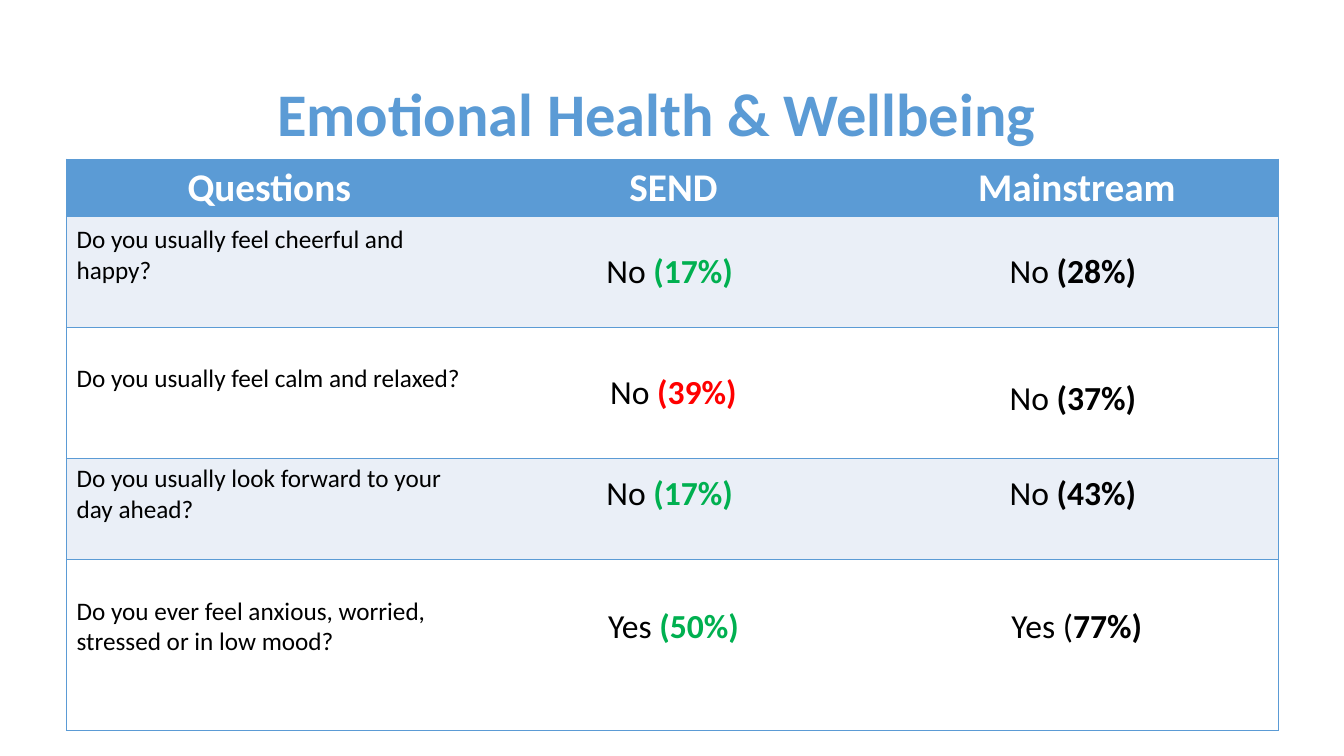
from lxml import etree
from pptx import Presentation
from pptx.dml import color
from pptx.enum import text
from pptx.oxml import ns
from pptx.util import Inches, Pt

BLUE, BAND, WHITE, BLACK = "5B9BD5", "EAEFF7", "FFFFFF", "000000"
GREEN, RED = "00B050", "FF0000"
HEADERS = ["Questions", "SEND", "Mainstream"]
COLS = [4.02, 4, 4]
ROWS = [0.57, 1.1, 1.3, 1, 1.7]
ANSWERS = [
    ("Do you usually feel cheerful and happy?",
     ("No ", "(17%) ", GREEN), ("No ", "(28%) ", BLACK), (0.34, 0, 0)),
    ("Do you usually feel calm and relaxed?",
     ("No ", "(39%)", RED), ("No ", "(37%) ", BLACK), (0.29, 0, -0.11)),
    ("Do you usually look forward to your day ahead?",
     ("No ", "(17%) ", GREEN), ("No", " (43%) ", BLACK), (0.3, 0.3, 0.3)),
    ("Do you ever feel anxious, worried, stressed or in low mood?",
     ("Yes ", "(50%)", GREEN), ("Yes (", "77%)", BLACK), (0.36, 0.36, 0.36)),
]


def rgb(value):
    """Return a colour from its hex string."""
    return color.RGBColor.from_string(value)


def add_run(p, words, hue, **fmt):
    """Add a formatted run to a paragraph."""
    r = p.add_run()
    r.text = words
    for name, value in {"name": "Calibri", **fmt}.items():
        setattr(r.font, name, value)
    r.font.color.rgb = rgb(hue)


def add_title(s, words):
    """Add the centred slide title."""
    sp = s.shapes.add_textbox(Inches(0.17), Inches(0.75), Inches(12.82), Inches(0.83))
    tf = sp.text_frame
    tf.word_wrap = True
    tf.vertical_anchor = text.MSO_ANCHOR.MIDDLE
    p = tf.paragraphs[0]
    p.alignment = text.PP_ALIGN.CENTER
    p.line_spacing = 0.9
    add_run(p, words, BLUE, size=Pt(43.2), bold=True)


def set_borders(cell, col):
    """Rule the cell above and below, and at the outer sides of the table."""
    ruled = {"lnL": col == 0, "lnR": col == len(COLS) - 1, "lnT": True, "lnB": True}
    tc_pr = cell._tc.get_or_add_tcPr()
    for i, (side, shown) in enumerate(ruled.items()):
        ln = etree.Element(ns.qn(f"a:{side}"), w=str(Pt(1)))
        if shown:
            fill = etree.SubElement(ln, ns.qn("a:solidFill"))
            etree.SubElement(fill, ns.qn("a:srgbClr"), val=BLUE)
        else:
            etree.SubElement(ln, ns.qn("a:noFill"))
        tc_pr.insert(i, ln)


def fill_cell(cell, col, back, runs, centred=True, lift=0):
    """Fill one cell with runs, raised from its middle by half the lift."""
    cell.fill.solid()
    cell.fill.fore_color.rgb = rgb(back)
    set_borders(cell, col)
    cell.vertical_anchor = text.MSO_ANCHOR.MIDDLE
    cell.margin_top = Inches(0.05 + max(-lift, 0))
    cell.margin_bottom = Inches(0.05 + max(lift, 0))
    p = cell.text_frame.paragraphs[0]
    p.alignment = text.PP_ALIGN.CENTER if centred else text.PP_ALIGN.LEFT
    for words, hue, size, bold in runs:
        add_run(p, words, hue, size=Pt(size), bold=bold)


def add_answers(s):
    """Add the table of questions and answers."""
    table = s.shapes.add_table(len(ROWS), len(COLS), Inches(0.66), Inches(1.58),
                               Inches(sum(COLS)), Inches(sum(ROWS))).table
    table.first_row = table.horz_banding = False
    for column, width in zip(table.columns, COLS):
        column.width = Inches(width)
    for row, height in zip(table.rows, ROWS):
        row.height = Inches(height)
    for col, words in enumerate(HEADERS):
        fill_cell(table.cell(0, col), col, BLUE, [(words, WHITE, 28, True)])
    for row, (question, send, mainstream, lifts) in enumerate(ANSWERS, 1):
        back = BAND if row % 2 else WHITE
        fill_cell(table.cell(row, 0), 0, back, [(question, BLACK, 18, False)],
                  centred=False, lift=lifts[0])
        for col, (reply, share, hue) in enumerate((send, mainstream), 1):
            runs = [(reply, BLACK, 24, False), (share, hue, 24, True)]
            fill_cell(table.cell(row, col), col, back, runs, lift=lifts[col])


def main():
    """Build and save the slide."""
    prs = Presentation()
    prs.slide_width, prs.slide_height = Inches(13.33), Inches(7.5)
    s = prs.slides.add_slide(prs.slide_layouts[6])
    add_title(s, "Emotional Health & Wellbeing ")
    add_answers(s)
    prs.save("out.pptx")


if __name__ == "__main__":
    main()
